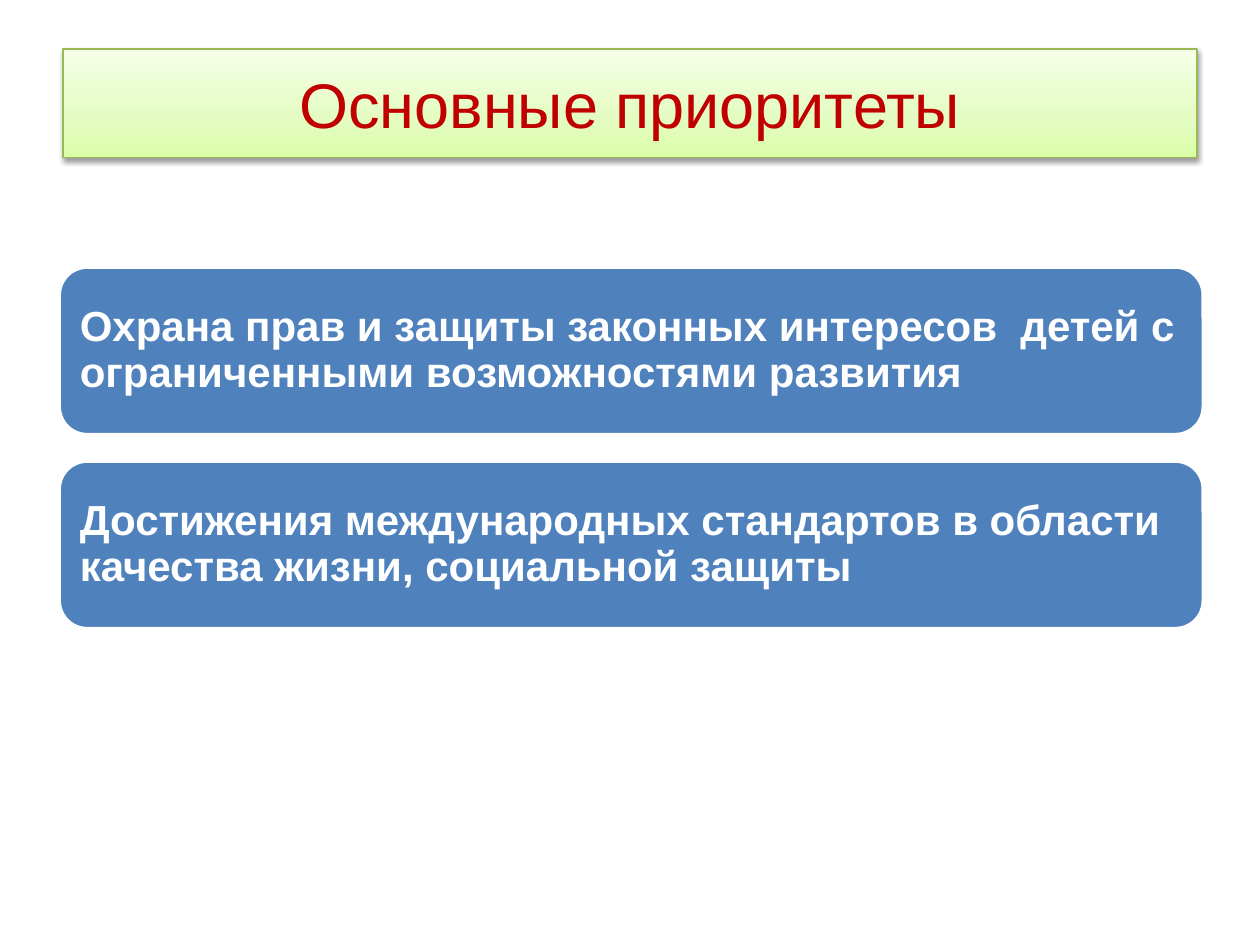
import copy

import pptx
import pptx.dml.color
import pptx.enum.shapes
import pptx.enum.text
import pptx.oxml
import pptx.oxml.ns
import pptx.util
from pptx.util import Inches

COLORS = {
    "white": "FFFFFF",
    "blue": "4F81BD",
    "red": "C00000",
    "green_line": "98B955",
}
TITLE_GRADIENT = [(0, "DAFDA7"), (0.35, "E4FCC2"), (1, "F5FFE7")]
PRIORITIES = [
    "Охрана прав и защиты законных интересов  детей с ограниченными возможностями развития",
    "Достижения международных стандартов в области качества жизни, социальной защиты",
]


def rgb(value):
    return pptx.dml.color.RGBColor.from_string(value)


def add_box(slide, kind, box, text, size, color, line, line_width):
    """Add an outlined shape with one paragraph; return it with the paragraph."""
    sp = slide.shapes.add_shape(kind, *[Inches(v) for v in box])
    sp.shadow.inherit = False
    sp.line.color.rgb = rgb(line)
    sp.line.width = pptx.util.Pt(line_width)
    tf = sp.text_frame
    tf.word_wrap = True
    tf.vertical_anchor = pptx.enum.text.MSO_ANCHOR.MIDDLE
    p = tf.paragraphs[0]
    p.text = text
    p.font.name = "Arial"
    p.font.size = pptx.util.Pt(size)
    p.font.color.rgb = rgb(color)
    return sp, p


prs = pptx.Presentation()
prs.slide_width = Inches(10)
prs.slide_height = Inches(7.5)
s = prs.slides.add_slide(prs.slide_layouts[6])

# Priority cards
for i, text in enumerate(PRIORITIES):
    sp, p = add_box(s, pptx.enum.shapes.MSO_SHAPE.ROUNDED_RECTANGLE,
                    (0.47, 2.12 + i * 1.54, 9.08, 1.33), text, 24,
                    COLORS["white"], COLORS["white"], 2)
    sp.fill.solid()
    sp.fill.fore_color.rgb = rgb(COLORS["blue"])
    # The rounded corners add their own inset of about 0.06 in
    sp.text_frame.margin_left = sp.text_frame.margin_right = Inches(0.1)
    p.alignment = pptx.enum.text.PP_ALIGN.LEFT
    p.line_spacing = 0.9
    p.font.bold = True

# Title bar
sp, p = add_box(s, pptx.enum.shapes.MSO_SHAPE.RECTANGLE, (0.5, 0.39, 9, 0.86),
                "Основные приоритеты", 36, COLORS["red"], COLORS["green_line"], 0.75)
p.alignment = pptx.enum.text.PP_ALIGN.CENTER

sp.fill.gradient()
sp.fill.gradient_angle = 90
stop_list = sp._element.spPr.find(".//" + pptx.oxml.ns.qn("a:gsLst"))
stop_list.insert(1, copy.deepcopy(stop_list[0]))
for stop, (position, color) in zip(sp.fill.gradient_stops, TITLE_GRADIENT):
    stop.position = position
    stop.color.rgb = rgb(color)

effects = sp._element.spPr.find(pptx.oxml.ns.qn("a:effectLst"))
effects.append(pptx.oxml.parse_xml(
    f'<a:outerShdw {pptx.oxml.ns.nsdecls("a")} blurRad="40000" dist="20000" '
    'dir="5400000" rotWithShape="0"><a:srgbClr val="000000">'
    '<a:alpha val="38000"/></a:srgbClr></a:outerShdw>'))

prs.save("out.pptx")
